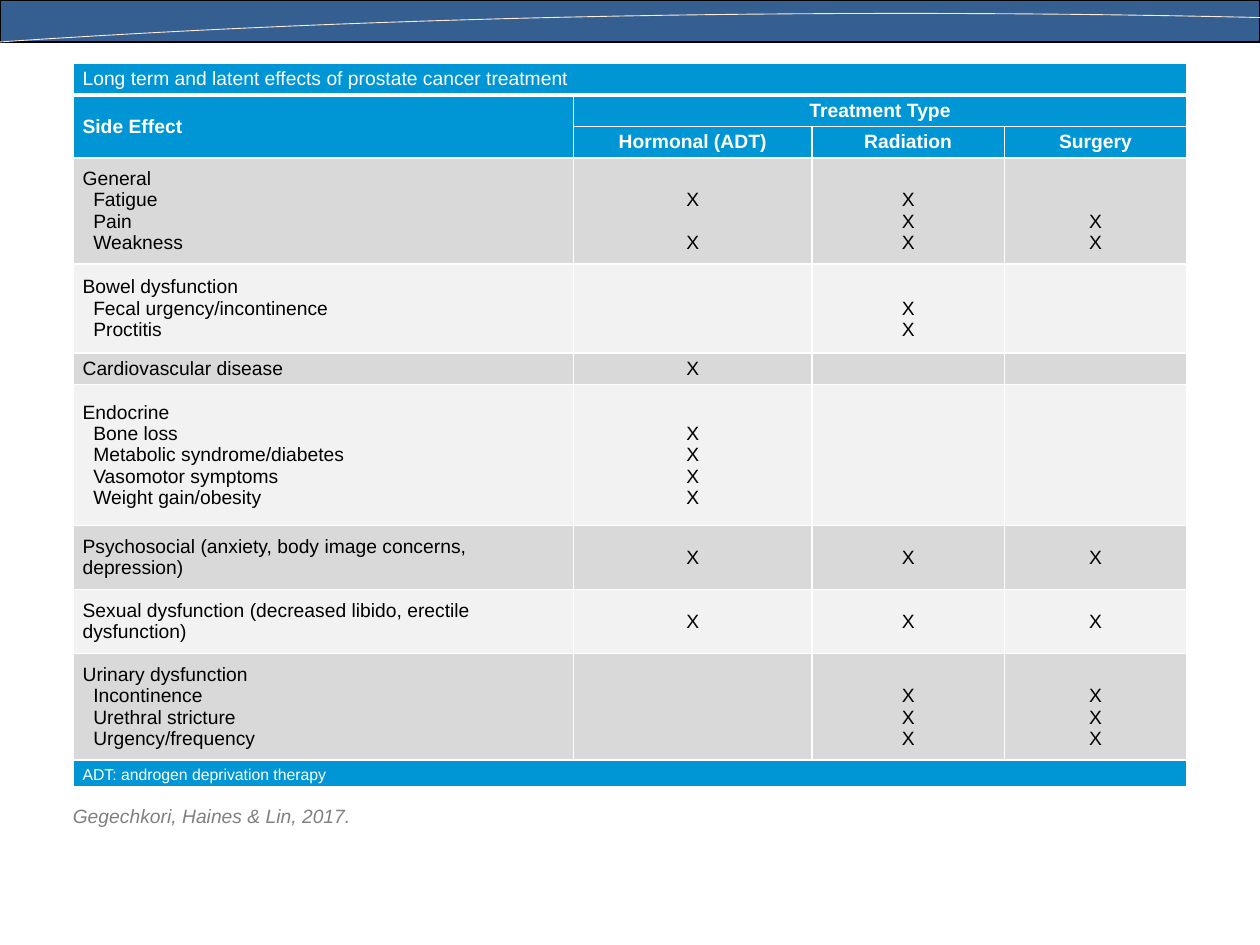
from lxml.etree import SubElement
from pptx import Presentation
from pptx.dml.color import RGBColor
from pptx.enum.shapes import MSO_SHAPE as Shape
from pptx.enum.text import MSO_ANCHOR as Anchor, PP_ALIGN as Align
from pptx.oxml.ns import qn
from pptx.util import Pt

WHITE = RGBColor(0xFF, 0xFF, 0xFF)
BLACK = RGBColor(0, 0, 0)
GRAY = RGBColor(0x80, 0x80, 0x80)
NAVY = RGBColor(0x36, 0x5F, 0x91)
CREAM = RGBColor(0xFF, 0xEA, 0xD5)
BLUE = RGBColor(0x00, 0x96, 0xD6)
BANDS = RGBColor(0xD9, 0xD9, 0xD9), RGBColor(0xF2, 0xF2, 0xF2)

BODY = {"name": "Arial", "size": Pt(11), "bold": False}
BODY_TEXT = BODY | {"color": BLACK}
TITLE_TEXT = BODY | {"color": WHITE}
HEAD_TEXT = TITLE_TEXT | {"bold": True}
NOTE_TEXT = TITLE_TEXT | {"size": Pt(9)}
CITATION_TEXT = BODY | {"color": GRAY, "italic": True}

LINE = 12.2  # height of one table text line
COLUMNS = [285.8, 136.1, 110.2, 103.9]
ROWS = [18, 18, 18, 60.5, 51, 18, 80.6, 36.5, 36.5, 61, 15]
TREATMENTS = ["Hormonal (ADT)", "Radiation", "Surgery"]

# Labels, then the marks of each treatment; a dot is a line without a mark
EFFECTS = [
    (["General", "Fatigue", "Pain", "Weakness"], ".X.X", ".XXX", "..XX"),
    (["Bowel dysfunction", "Fecal urgency/incontinence", "Proctitis"], "", ".XX", ""),
    (["Cardiovascular disease"], "X", "", ""),
    (["Endocrine", "Bone loss", "Metabolic syndrome/diabetes",
      "Vasomotor symptoms", "Weight gain/obesity"], ".XXXX", "", ""),
    (["Psychosocial (anxiety, body image concerns, depression)"], "X", "X", "X"),
    (["Sexual dysfunction (decreased libido, erectile dysfunction)"], "X", "X", "X"),
    (["Urinary dysfunction", "Incontinence", "Urethral stricture",
      "Urgency/frequency"], "", ".XXX", ".XXX"),
]


def write(paragraph, text, text_format):
    run = paragraph.add_run()
    run.text = text
    for name, value in text_format.items():
        if name == "color":
            run.font.color.rgb = value
        else:
            setattr(run.font, name, value)


def add_line(frame, first, text, text_format, align=Align.LEFT):
    """Add one table line, reusing the empty first paragraph."""
    paragraph = frame.paragraphs[0] if first else frame.add_paragraph()
    paragraph.alignment = align
    paragraph.line_spacing = Pt(LINE)
    write(paragraph, text, text_format)
    return paragraph


def write_labels(cell, labels):
    for index, label in enumerate(labels):
        paragraph = add_line(cell.text_frame, index == 0, label, BODY_TEXT)
        if index:
            paragraph._p.get_or_add_pPr().set("marL", str(Pt(6.1)))


def write_marks(cell, marks):
    """Place each X on its line; skipped lines become space above it."""
    gap, first = 0, True
    for mark in marks:
        if mark == ".":
            gap += LINE
            continue
        paragraph = add_line(cell.text_frame, first, mark, BODY_TEXT, Align.CENTER)
        if first:
            cell.margin_top = Pt(gap)
        elif gap:
            paragraph.space_before = Pt(gap)
        gap, first = 0, False


def style_cell(cell, fill, bottom=1):
    cell.vertical_anchor = Anchor.MIDDLE
    margins = {"left": 5.2, "right": 5.2, "top": 0, "bottom": 0}
    for side, value in margins.items():
        setattr(cell, f"margin_{side}", Pt(value))
    properties = cell._tc.get_or_add_tcPr()
    for side, width in {"L": 1, "R": 1, "T": 1, "B": bottom}.items():
        border = SubElement(properties, qn(f"a:ln{side}"), w=str(Pt(width)))
        solid = SubElement(border, qn("a:solidFill"))
        SubElement(solid, qn("a:srgbClr"), val=str(WHITE))
    cell.fill.solid()
    cell.fill.fore_color.rgb = fill
    # Keep empty cells from stretching their row
    paragraph = cell.text_frame.paragraphs[0]
    paragraph.line_spacing = Pt(LINE)
    SubElement(paragraph._p, qn("a:endParaRPr"), sz="1100")


def add_banner(slide, left, top, width, height):
    # Bar
    bar = slide.shapes.add_shape(Shape.RECTANGLE, Pt(left), Pt(top), Pt(width), Pt(height))
    bar.fill.solid()
    bar.fill.fore_color.rgb = NAVY

    # Arc, sampled from a cubic curve
    heights = 0.42 * height, 0.24 * height, 0.24 * height, height
    across = width, 0.744 * width, 0.379 * width, 0

    def curve(values, t):
        weights = (1 - t) ** 3, 3 * t * (1 - t) ** 2, 3 * t * t * (1 - t), t ** 3
        return sum(weight * value for weight, value in zip(weights, values))

    points = [(Pt(left + curve(across, step / 60)), Pt(top + curve(heights, step / 60)))
              for step in range(61)]
    builder = slide.shapes.build_freeform(*points[0])
    builder.add_line_segments(points[1:], close=False)
    arc = builder.convert_to_shape()
    arc.fill.background()

    for shape, color, weight in (bar, BLACK, 0.75), (arc, CREAM, 0.5):
        shape.shadow.inherit = False
        shape.line.color.rgb = color
        shape.line.width = Pt(weight)


def add_effects_table(slide, left, top, width, height):
    frame = slide.shapes.add_table(len(ROWS), len(COLUMNS),
                                   Pt(left), Pt(top), Pt(width), Pt(height))
    table = frame.table
    table.first_row = table.horz_banding = False
    for column, size in zip(table.columns, COLUMNS):
        column.width = Pt(size)
    for row, size in zip(table.rows, ROWS):
        row.height = Pt(size)

    # Fills and borders
    last = len(ROWS) - 1
    for index, row in enumerate(table.rows):
        fill = BANDS[(index - 3) % 2] if 3 <= index < last else BLUE
        for cell in row.cells:
            style_cell(cell, fill, bottom=3 if index == 0 else 1)

    # Title, headings and footnote
    for start, end in ((0, 0), (0, 3)), ((1, 0), (2, 0)), ((1, 1), (1, 3)), ((last, 0), (last, 3)):
        table.cell(*start).merge(table.cell(*end))
    headings = [
        (0, 0, "Long term and latent effects of prostate cancer treatment", TITLE_TEXT, Align.LEFT),
        (1, 0, "Side Effect", HEAD_TEXT, Align.LEFT),
        (1, 1, "Treatment Type", HEAD_TEXT, Align.CENTER),
        (last, 0, "ADT: androgen deprivation therapy", NOTE_TEXT, Align.LEFT),
    ]
    headings += [(2, column, name, HEAD_TEXT, Align.CENTER)
                 for column, name in enumerate(TREATMENTS, 1)]
    for row, column, text, text_format, align in headings:
        add_line(table.cell(row, column).text_frame, True, text, text_format, align)

    # Side effects
    for row, (labels, *treatments) in enumerate(EFFECTS, 3):
        write_labels(table.cell(row, 0), labels)
        for column, marks in enumerate(treatments, 1):
            write_marks(table.cell(row, column), marks)


def add_citation(slide, left, top, width, height):
    box = slide.shapes.add_textbox(Pt(left), Pt(top), Pt(width), Pt(height))
    box.text_frame.word_wrap = True
    write(box.text_frame.paragraphs[0], "Gegechkori, Haines & Lin, 2017.", CITATION_TEXT)


def main():
    presentation = Presentation()
    presentation.slide_width, presentation.slide_height = Pt(720), Pt(540)
    slide = presentation.slides.add_slide(presentation.slide_layouts[6])
    add_banner(slide, 0, 0, 720, 24)
    add_citation(slide, 34.5, 455.8, 649.5, 20.6)
    add_effects_table(slide, 42, 36.3, sum(COLUMNS), sum(ROWS))
    presentation.save("out.pptx")


if __name__ == "__main__":
    main()
